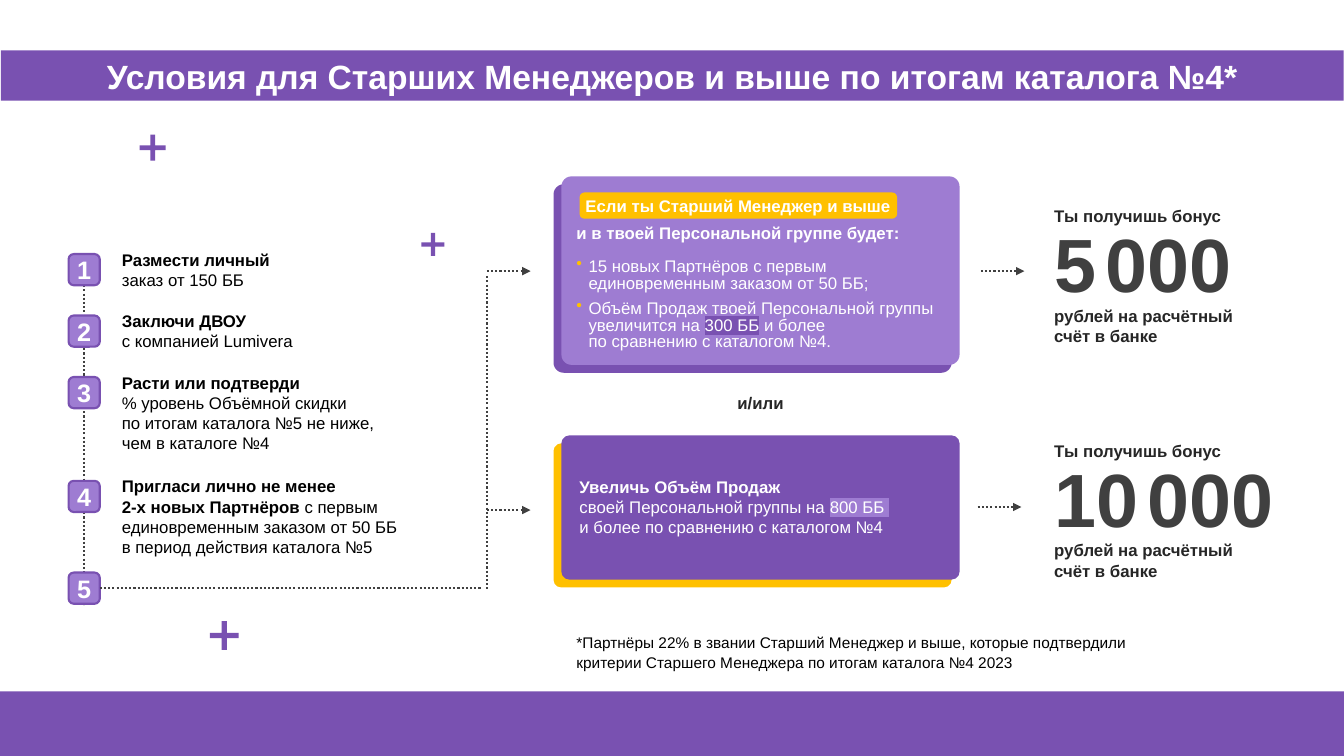
from copy import deepcopy

from lxml import etree
from pptx import Presentation
from pptx import util as u
from pptx.dml.color import RGBColor
from pptx.enum import dml, shapes, text
from pptx.oxml import ns

COLS, ROWS = 160, 90
PURPLE, LILAC, AMBER = "7951B1", "9E7CD2", "FFC000"
WHITE, BLACK, INK, GREY = "FFFFFF", "000000", "262626", "404040"
SHAPE = shapes.MSO_SHAPE


def rgb(value):
    return RGBColor.from_string(value)


def element(parent, tag, **attrs):
    return etree.SubElement(parent, ns.qn(tag), attrs)


def color_element(parent, tag, value):
    """Add an element that holds one sRGB colour."""
    node = element(parent, tag)
    element(node, "a:srgbClr", val=value)
    return node


class Deck:
    """Style and current slide; lengths are columns and rows of a 160 x 90 grid."""

    font = "Arial"

    def __init__(self):
        self.prs = Presentation()
        self.prs.slide_width = u.Inches(13.33)
        self.prs.slide_height = u.Inches(7.5)
        self.slide = self.prs.slides.add_slide(self.prs.slide_layouts[6])

    def x(self, cols):
        return round(self.prs.slide_width * cols / COLS)

    def y(self, rows):
        return round(self.prs.slide_height * rows / ROWS)

    def box(self, left, top, width, height):
        return self.x(left), self.y(top), self.x(width), self.y(height)

    def shape(self, kind, place, fill, adj=None, outline=None):
        sp = self.slide.shapes.add_shape(kind, *self.box(*place))
        sp.shadow.inherit = False
        sp.fill.solid()
        sp.fill.fore_color.rgb = rgb(fill)
        if adj is not None:
            sp.adjustments[0] = adj
        if outline:
            sp.line.color.rgb = rgb(outline)
            sp.line.width = u.Pt(1.5)
        else:
            sp.line.fill.background()
        return sp

    def card(self, place, fill, shadow):
        """Rounded card with a hard shadow below and to the left."""
        sp = self.shape(SHAPE.ROUNDED_RECTANGLE, place, fill, 0.054)
        effects = sp._element.spPr.find(ns.qn("a:effectLst"))
        outer = element(effects, "a:outerShdw", blurRad="0", dist=str(u.Pt(8)),
                        dir="8100000", algn="tr", rotWithShape="0")
        element(outer, "a:srgbClr", val=shadow)

    def line(self, start, end, arrow=False):
        ln = self.slide.shapes.add_connector(
            shapes.MSO_CONNECTOR.STRAIGHT, self.x(start[0]), self.y(start[1]),
            self.x(end[0]), self.y(end[1]))
        ln.line.color.rgb = rgb(GREY)
        ln.line.width = u.Pt(1.5)
        ln.line.dash_style = dml.MSO_LINE.ROUND_DOT
        if arrow:
            element(ln.line._ln, "a:tailEnd", type="triangle")
        element(ln._element.spPr, "a:effectLst")
        return ln

    def run(self, p, words, size, color, bold=False, mark=None):
        """Add words as runs with line breaks; mark is a highlight colour."""
        for i, part in enumerate(words.split("\n")):
            if i:
                p.add_line_break()
                p._p[-1].append(deepcopy(r._r.rPr))
            if not part:
                continue
            r = p.add_run()
            r.text = part
            r.font.size = u.Pt(size)
            r.font.bold = bold
            r.font.color.rgb = rgb(color)
            if mark:
                solid = r._r.rPr.find(ns.qn("a:solidFill"))
                solid.addnext(color_element(r._r.rPr, "a:highlight", mark))
            r.font.name = self.font

    def label(self, sp, words, size):
        """Centre white bold words in a shape."""
        tf = sp.text_frame
        tf.margin_left = tf.margin_right = tf.margin_top = tf.margin_bottom = 0
        tf.vertical_anchor = text.MSO_ANCHOR.MIDDLE
        tf.paragraphs[0].alignment = text.PP_ALIGN.CENTER
        self.run(tf.paragraphs[0], words, size, WHITE, True)

    def text(self, place, *runs):
        """Text box of one paragraph; each run is the arguments of run()."""
        tf = self.slide.shapes.add_textbox(*self.box(*place)).text_frame
        tf.word_wrap = True
        tf.auto_size = text.MSO_AUTO_SIZE.SHAPE_TO_FIT_TEXT
        for args in runs:
            self.run(tf.paragraphs[0], *args)
        return tf

    def bullets(self, place, items):
        tf = self.text(place)
        for i, runs in enumerate(items):
            p = tf.add_paragraph() if i else tf.paragraphs[0]
            pPr = p._p.get_or_add_pPr()
            pPr.set("marL", str(u.Inches(0.12)))
            pPr.set("indent", str(u.Inches(-0.12)))
            color_element(pPr, "a:buClr", AMBER)
            element(pPr, "a:buChar", char="•")
            p.line_spacing = u.Pt(12)
            if i:
                p.space_before = u.Pt(6)
            for args in runs:
                self.run(p, *args)

    def bonus(self, top, thousands):
        left, width = 124.32, 32
        self.text((left, top, width, 3.6), ("Ты получишь бонус", 12, INK, True))
        self.text((left, top + 1.4, width, 12.12), (thousands, 53.9, GREY, True),
                  (" ", 24, GREY, True), ("000", 53.9, GREY, True))
        self.text((left, top + 11.88, width, 6),
                  ("рублей на расчётный\nсчёт в банке", 12, INK, True))


def main():
    deck = Deck()
    deck.shape(SHAPE.RECTANGLE, (0, 82.32, COLS, 7.68), PURPLE)
    for left, top, size in ((24.36, 73.32, 4.68), (49.68, 27.24, 3.72), (16.08, 15.48, 4.2)):
        deck.shape(SHAPE.MATH_PLUS, (left, top, size, size), PURPLE, 0.134)
    title = deck.shape(SHAPE.RECTANGLE, (0.12, 6, 159.84, 6), PURPLE)
    deck.label(title, "Условия для Старших Менеджеров и выше по итогам каталога №4*", 24)

    # Steps
    spine, branch = 10, 57.96
    deck.line((spine, 31.44), (spine, 72))
    steps = (
        (30.24, "Размести личный\n", "заказ от 150 ББ"),
        (37.56, "Заключи ДВОУ\n", "с компанией Lumivera"),
        (44.88, "Расти или подтверди\n",
         "% уровень Объёмной скидки\nпо итогам каталога №5 не ниже,\nчем в каталоге №4"),
        (57.24, "Пригласи лично не менее\n2-х новых Партнёров ",
         "с первым единовременным заказом от 50 ББ\nв период действия каталога №5"),
        (68.16, "", ""),
    )
    for number, (top, lead, rest) in enumerate(steps, 1):
        badge = deck.shape(SHAPE.ROUNDED_RECTANGLE, (8.16, top, 3.72, 3.72), LILAC,
                           outline=PURPLE)
        deck.label(badge, str(number), 18)
        if lead:
            deck.text((13.32, top - 1.15, 38.28, 6), (lead, 12, BLACK, True), (rest, 12, BLACK))
    deck.line((11.88, 70.02), (57.36, 70.02)).begin_connect(badge, 3)
    deck.line((branch, 32.88), (branch, 70.08))
    for left, row in ((branch, 32.28), (branch, 60.72), (116.76, 32.28), (116.4, 60.36)):
        deck.line((left, row), (left + 5.2, row), arrow=True)

    # Conditions
    card_left, card_width, text_left = 66.84, 47.4, 67.44
    deck.card((card_left, 21, card_width, 22.44), LILAC, PURPLE)
    deck.shape(SHAPE.ROUNDED_RECTANGLE, (69, 22.92, 37.8, 3.12), AMBER, 0.181)
    deck.text((68.52, 22.68, 41.16, 3.6), ("Если ты Старший Менеджер и выше", 12, WHITE, True))
    deck.text((text_left, 25.92, 42.12, 3.6),
              ("и в твоей Персональной группе будет:", 12, WHITE, True))
    deck.bullets((text_left, 30.24, 46.44, 12.36), (
        [("15 новых Партнёров с первым единовременным заказом от 50 ББ;", 12, WHITE)],
        [("Объём Продаж твоей Персональной группы увеличится на ", 12, WHITE),
         ("300 ББ", 12, WHITE, False, PURPLE),
         (" и более\nпо сравнению с каталогом №4.", 12, WHITE)],
    ))
    deck.text((card_left, 46.2, card_width, 3.6),
              ("и/или", 12, INK, True)).paragraphs[0].alignment = text.PP_ALIGN.CENTER
    deck.card((card_left, 51.84, card_width, 17.16), PURPLE, AMBER)
    deck.text((67.8, 56.16, 46.56, 8.52), ("Увеличь Объём Продаж\n", 12, WHITE, True),
              ("своей Персональной группы на ", 12, WHITE),
              ("800 ББ \n", 12, WHITE, False, LILAC),
              ("и более по сравнению с каталогом №4", 12, WHITE))

    # Bonuses and footnote
    deck.bonus(23.88, "5")
    deck.bonus(51.84, "10")
    note = deck.text((text_left, 74.64, 74.64, 5.88), (
        "*Партнёры 22% в звании Старший Менеджер и выше, которые подтвердили "
        "критерии Старшего Менеджера по итогам каталога №4 2023", 11, BLACK))
    note.paragraphs[0].line_spacing = 1.07
    deck.prs.save("out.pptx")


if __name__ == "__main__":
    main()
